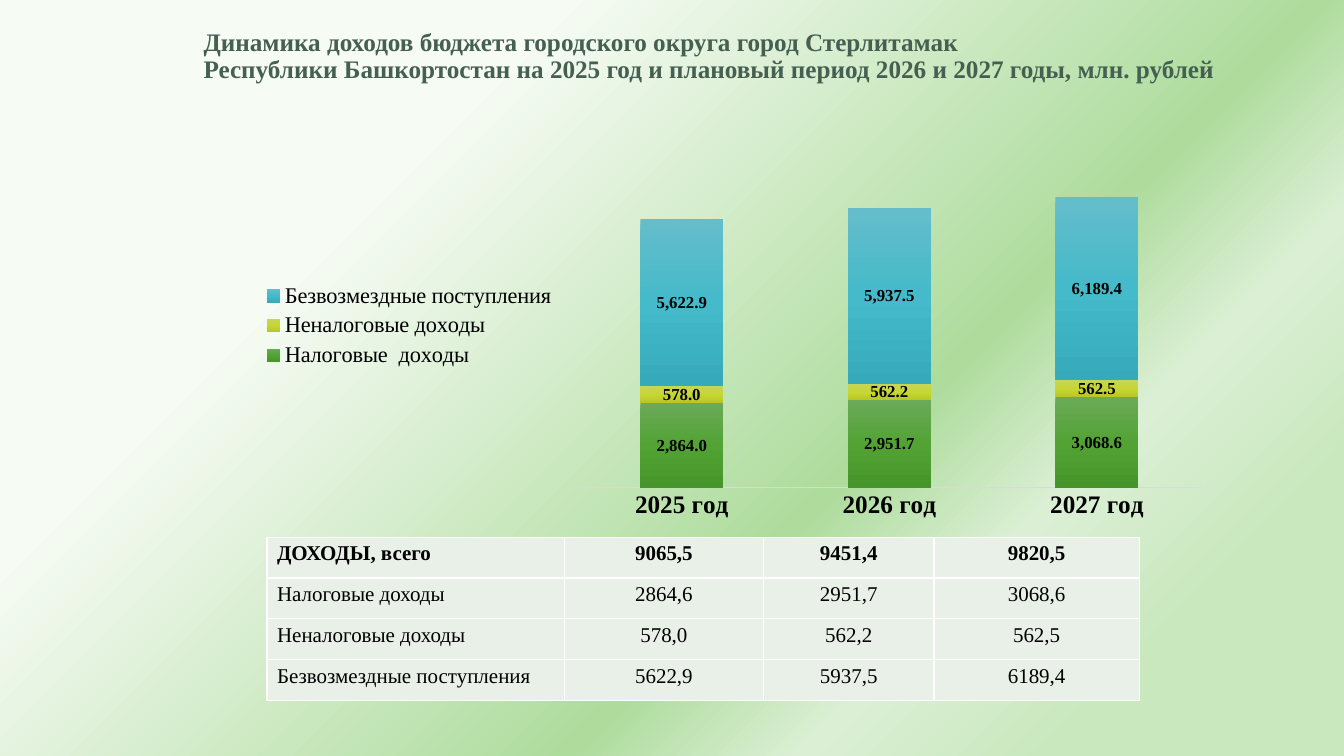
from lxml import etree
from pptx import Presentation
from pptx import util as u
from pptx.chart import data as chart_data
from pptx.dml import color
from pptx.enum import chart as chart_enum
from pptx.enum import text
from pptx.oxml import ns

WIDTH, HEIGHT = 13.34, 7.5
FACE = "Times New Roman"
BLACK = "000000"
YEARS = ["2025 год", "2026 год", "2027 год"]
BACKDROP = [(27, "F6FBF4", 82), (63, "AEDC9D", 100), (74, "DBEFD4", 100), (86, "C9E8BE", 100)]
INCOME = [
    ("Налоговые  доходы", [2864, 2951.7, 3068.6], ["6BAA59", "52A334", "46952A"]),
    ("Неналоговые доходы", [578, 562.2, 562.5], ["C7D55B", "C6D633", "B7C725"]),
    ("Безвозмездные поступления", [5622.9, 5937.5, 6189.4], ["65BDCB", "44BACA", "36AABA"]),
]
TOTALS = [
    ["ДОХОДЫ, всего", "9065,5", "9451,4", "9820,5"],
    ["Налоговые доходы", "2864,6", "2951,7", "3068,6"],
    ["Неналоговые доходы", "578,0", "562,2", "562,5"],
    ["Безвозмездные поступления", "5622,9", "5937,5", "6189,4"],
]


def rgb(value):
    """Turn a hex string into a colour."""
    return color.RGBColor.from_string(value)


def inches(box):
    """Turn a box in inches into slide lengths."""
    return [u.Inches(length) for length in box]


def style(font, size, bold=False, shade=BLACK):
    """Set the face, size, weight and colour of a font."""
    font.name, font.size, font.bold = FACE, u.Pt(size), bold
    font.color.rgb = rgb(shade)


def write(frame, words, size, bold=False, shade=BLACK, align="LEFT", spacing=1.0):
    """Put formatted text into a text frame."""
    frame.text = words
    for para in frame.paragraphs:
        para.alignment = getattr(text.PP_ALIGN, align)
        para.line_spacing = spacing
        for span in para.runs:
            style(span.font, size, bold, shade)


def blend(element, stops, angle):
    """Replace the first solid fill in an element by a linear gradient."""
    solid = element.find(".//" + ns.qn("a:solidFill"))
    gradient = etree.Element(ns.qn("a:gradFill"), rotWithShape="1")
    stop_list = etree.SubElement(gradient, ns.qn("a:gsLst"))
    for place, shade, opacity in stops:
        stop = etree.SubElement(stop_list, ns.qn("a:gs"), pos=str(place * 1000))
        tint = etree.SubElement(stop, ns.qn("a:srgbClr"), val=shade)
        if opacity < 100:
            etree.SubElement(tint, ns.qn("a:alpha"), val=str(opacity * 1000))
    etree.SubElement(gradient, ns.qn("a:lin"), ang=str(angle * 60000), scaled="0")
    solid.getparent().replace(solid, gradient)


def paint_background(page):
    """Fill the page with the diagonal green gradient."""
    page.background.fill.solid()
    page.background.fill.fore_color.rgb = rgb("FFFFFF")
    blend(page.element, BACKDROP, 45)


def place_title(page, box):
    """Place the two-line heading."""
    title = page.shapes.title
    title.left, title.top, title.width, title.height = inches(box)
    frame = title.text_frame
    frame.word_wrap = True
    frame.auto_size = text.MSO_AUTO_SIZE.NONE
    frame.vertical_anchor = text.MSO_ANCHOR.MIDDLE
    words = ("Динамика доходов бюджета городского округа город Стерлитамак \v"
             "Республики Башкортостан на 2025 год и плановый период 2026 и 2027 годы, млн. рублей")
    write(frame, words, 18, bold=True, shade="455F51", spacing=0.9)


def add_income_chart(page, box):
    """Draw the stacked columns of income by year."""
    figures = chart_data.CategoryChartData(number_format="#,##0.0")
    figures.categories = YEARS
    for name, values, _ in INCOME:
        figures.add_series(name, values)
    kind = chart_enum.XL_CHART_TYPE.COLUMN_STACKED
    chart = page.shapes.add_chart(kind, *inches(box), figures).chart
    style(chart.font, 10)
    chart.has_title = False
    chart.has_legend = True
    chart.legend.position = chart_enum.XL_LEGEND_POSITION.LEFT
    chart.legend.include_in_layout = False
    style(chart.legend.font, 16)

    chart.value_axis.visible = False
    chart.value_axis.has_major_gridlines = False
    axis = chart.category_axis
    axis.major_tick_mark = chart_enum.XL_TICK_MARK.NONE
    axis.format.line.color.rgb = rgb("D9D9D9")
    axis.format.line.width = u.Pt(1)
    style(axis.tick_labels.font, 18, bold=True)

    plot = chart.plots[0]
    plot.gap_width, plot.overlap = 150, 100
    plot.vary_by_categories = False
    for series, (_, _, shades) in zip(plot.series, INCOME):
        series.format.fill.solid()
        series.format.fill.fore_color.rgb = rgb(shades[1])
        blend(series._element, [(50 * i, shade, 100) for i, shade in enumerate(shades)], 90)
        labels = series.data_labels
        labels.show_value = True
        labels.number_format = "#,##0.0"
        labels.number_format_is_linked = False
        style(labels.font, 12, bold=True)


def outline(cell, shade):
    """Give a cell thin borders on all four sides."""
    properties = cell._tc.get_or_add_tcPr()
    for index, side in enumerate(["lnL", "lnR", "lnT", "lnB"]):
        line = etree.Element(ns.qn("a:" + side), w=str(u.Pt(1)))
        fill = etree.SubElement(line, ns.qn("a:solidFill"))
        etree.SubElement(fill, ns.qn("a:srgbClr"), val=shade)
        properties.insert(index, line)


def add_income_table(page, box):
    """Place the table of income with its total row."""
    table = page.shapes.add_table(len(TOTALS), len(TOTALS[0]), *inches(box)).table
    table.first_row = table.horz_banding = False
    for column, width in zip(table.columns, [2.95, 1.98, 1.69, 2.04]):
        column.width = u.Inches(width)
    for i, row in enumerate(TOTALS):
        for j, words in enumerate(row):
            cell = table.cell(i, j)
            cell.fill.solid()
            cell.fill.fore_color.rgb = rgb("E9F0E8")
            outline(cell, "FFFFFF")
            write(cell.text_frame, words, 15, bold=i == 0, align="CENTER" if j else "LEFT")


def main():
    """Build the income slide and save it."""
    deck = Presentation()
    deck.slide_width, deck.slide_height = u.Inches(WIDTH), u.Inches(HEIGHT)
    page = deck.slides.add_slide(deck.slide_layouts.get_by_name("Title Only"))
    paint_background(page)
    place_title(page, (1.92, 0.29, WIDTH - 1.92, 0.54))
    add_income_chart(page, (2.49, 1.23, 9.62, 4))
    add_income_table(page, (2.65, 5.33, 8.66, 1.62))
    deck.save("out.pptx")


if __name__ == "__main__":
    main()
